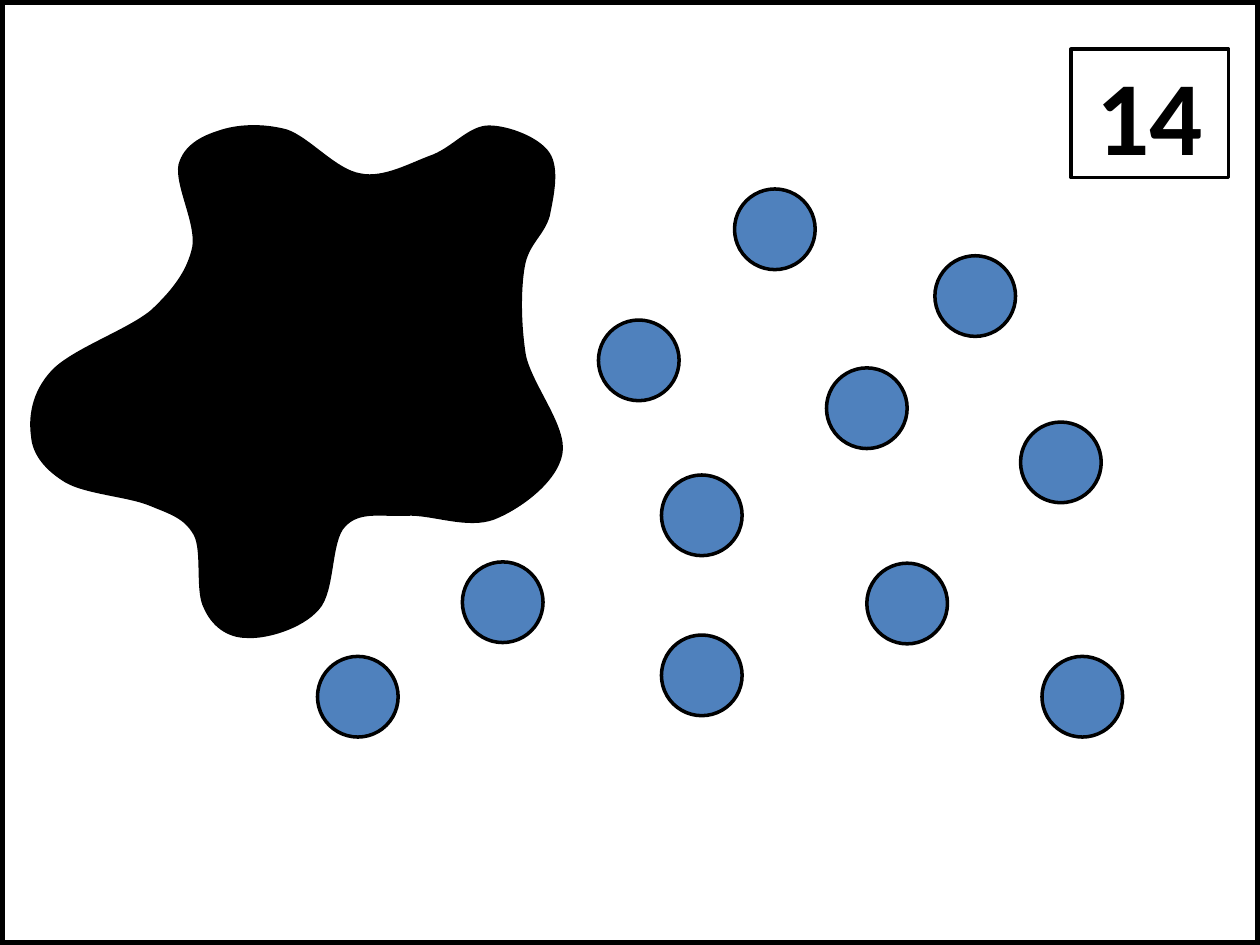
from itertools import chain

from lxml.etree import SubElement
from pptx import Presentation
from pptx.dml.color import RGBColor
from pptx.enum.shapes import MSO_SHAPE as Preset
from pptx.enum.text import MSO_ANCHOR as Anchor, PP_ALIGN as Align
from pptx.oxml.ns import qn
from pptx.util import Inches, Pt

THEME = {
    "ink": RGBColor(0x00, 0x00, 0x00),
    "paper": RGBColor(0xFF, 0xFF, 0xFF),
    "counter": RGBColor(0x4F, 0x81, 0xBD),
    "font": "Calibri",
    "total_size": Pt(60),
    "outline": Pt(2),
    "frame": Pt(6),
}

SLIDE_SIZE = (10, 7.5)
TOTAL = "14"
TOTAL_BOX = (8.5, 0.39, 1.25, 1.02)

COUNTER_SIZE = 0.64
COUNTERS = [
    (2.52, 5.21), (3.67, 4.46), (5.83, 1.5), (4.75, 2.54),
    (7.42, 2.03), (8.27, 5.21), (8.1, 3.35), (6.56, 2.92),
    (5.25, 3.77), (5.25, 5.04), (6.88, 4.47),
]

SPLAT_START = (0.53, 3.82)
SPLAT_CURVES = [
    ((0.38, 3.73), (0.27, 3.61), (0.26, 3.46)),
    ((0.24, 3.32), (0.26, 3.12), (0.42, 2.95)),
    ((0.58, 2.78), (1.02, 2.63), (1.21, 2.47)),
    ((1.39, 2.3), (1.5, 2.15), (1.54, 1.96)),
    ((1.57, 1.77), (1.4, 1.47), (1.43, 1.31)),
    ((1.47, 1.16), (1.61, 1.09), (1.74, 1.05)),
    ((1.88, 1), (2.08, 0.99), (2.27, 1.04)),
    ((2.45, 1.1), (2.66, 1.36), (2.86, 1.39)),
    ((3.05, 1.43), (3.27, 1.3), (3.44, 1.24)),
    ((3.61, 1.17), (3.73, 1.01), (3.88, 1.01)),
    ((4.03, 1.01), (4.27, 1.1), (4.35, 1.22)),
    ((4.43, 1.34), (4.38, 1.56), (4.35, 1.71)),
    ((4.31, 1.86), (4.18, 1.93), (4.15, 2.12)),
    ((4.12, 2.3), (4.12, 2.57), (4.16, 2.82)),
    ((4.21, 3.06), (4.49, 3.39), (4.45, 3.6)),
    ((4.41, 3.82), (4.12, 4.03), (3.92, 4.11)),
    ((3.71, 4.19), (3.43, 4.07), (3.23, 4.08)),
    ((3.03, 4.09), (2.85, 4.04), (2.73, 4.17)),
    ((2.61, 4.29), (2.65, 4.69), (2.52, 4.83)),
    ((2.39, 4.98), (2.11, 5.06), (1.96, 5.05)),
    ((1.81, 5.05), (1.69, 4.96), (1.63, 4.82)),
    ((1.56, 4.69), (1.62, 4.37), (1.55, 4.24)),
    ((1.47, 4.1), (1.36, 4.07), (1.19, 4)),
    ((1.02, 3.93), (0.69, 3.91), SPLAT_START),
]


def style(shape, fill, width=THEME["outline"]):
    shape.shadow.inherit = False
    if fill is None:
        shape.fill.background()
    else:
        shape.fill.solid()
        shape.fill.fore_color.rgb = fill
    shape.line.color.rgb = THEME["ink"]
    shape.line.width = width
    return shape


def add_preset(slide, preset, bounds, fill, width=THEME["outline"]):
    shape = slide.shapes.add_shape(preset, *map(Inches, bounds))
    return style(shape, fill, width)


def bend_segments(shape):
    segments = list(shape.element.iter(qn("a:lnTo")))
    outline = segments[0].getparent()
    closing = outline.find(qn("a:close"))
    for first in range(0, len(segments), 3):
        curve = SubElement(outline, qn("a:cubicBezTo"))
        for segment in segments[first:first + 3]:
            curve.append(segment[0])
            outline.remove(segment)
    outline.append(closing)


def add_splat(slide):
    start = tuple(map(Inches, SPLAT_START))
    points = [tuple(map(Inches, point)) for point in chain(*SPLAT_CURVES)]
    outline = slide.shapes.build_freeform(*start)
    outline.add_line_segments(points, close=True)
    splat = style(outline.convert_to_shape(), THEME["ink"])
    bend_segments(splat)


def add_total(slide):
    box = add_preset(slide, Preset.RECTANGLE, TOTAL_BOX, THEME["paper"])
    box.text_frame.vertical_anchor = Anchor.MIDDLE
    paragraph = box.text_frame.paragraphs[0]
    paragraph.alignment = Align.CENTER
    run = paragraph.add_run()
    run.text = TOTAL
    run.font.name = THEME["font"]
    run.font.size = THEME["total_size"]
    run.font.bold = True
    run.font.color.rgb = THEME["ink"]


def main():
    deck = Presentation()
    deck.slide_width, deck.slide_height = map(Inches, SLIDE_SIZE)
    slide = deck.slides.add_slide(deck.slide_layouts[6])
    add_splat(slide)
    add_total(slide)
    for left, top in COUNTERS:
        bounds = (left, top, COUNTER_SIZE, COUNTER_SIZE)
        add_preset(slide, Preset.OVAL, bounds, THEME["counter"])
    add_preset(slide, Preset.RECTANGLE, (0, 0, *SLIDE_SIZE), None, THEME["frame"])
    deck.save("out.pptx")


if __name__ == "__main__":
    main()
